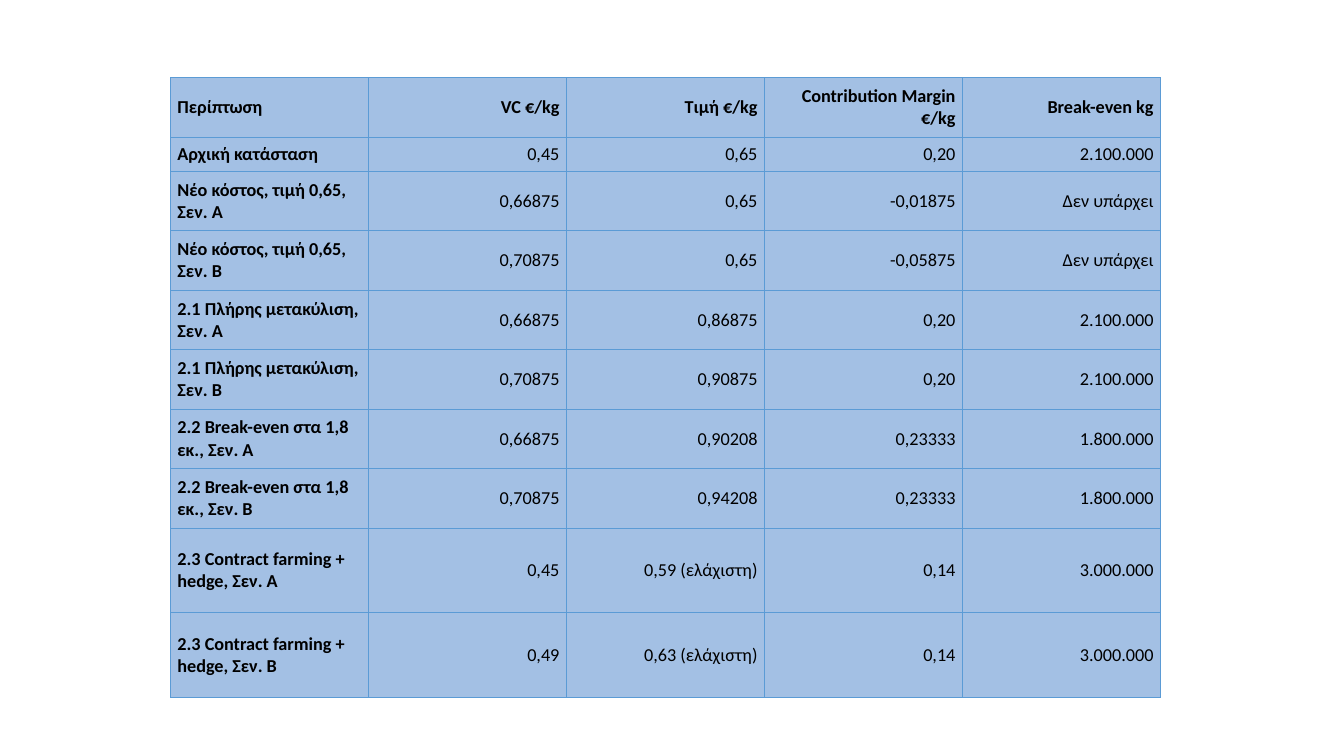
from dataclasses import dataclass

from lxml import etree
from pptx import Presentation
from pptx import util as u
from pptx.dml import color
from pptx.enum import text
from pptx.oxml import ns

COLORS = {"fill": "A3C0E4", "border": "5B9BD5", "text": "000000"}
FONT = "Calibri"
SIZE = u.Pt(13)
BORDER = u.Pt(0.5)
COLUMN = u.Inches(1.964)
MARGIN_X, MARGIN_Y = u.Inches(0.07), u.Inches(0.04)
SINGLE, DOUBLE, TALL = 0.34, 0.59, 0.84


@dataclass(frozen=True)
class Case:
    label: str
    values: tuple[str, ...]
    height: float = DOUBLE


CASES = [
    Case("Περίπτωση", ("VC €/kg", "Τιμή €/kg", "Contribution Margin €/kg", "Break-even kg")),
    Case("Αρχική κατάσταση", ("0,45", "0,65", "0,20", "2.100.000"), SINGLE),
    Case("Νέο κόστος, τιμή 0,65, Σεν. Α", ("0,66875", "0,65", "-0,01875", "Δεν υπάρχει")),
    Case("Νέο κόστος, τιμή 0,65, Σεν. Β", ("0,70875", "0,65", "-0,05875", "Δεν υπάρχει")),
    Case("2.1 Πλήρης μετακύλιση, Σεν. Α", ("0,66875", "0,86875", "0,20", "2.100.000")),
    Case("2.1 Πλήρης μετακύλιση, Σεν. Β", ("0,70875", "0,90875", "0,20", "2.100.000")),
    Case("2.2 Break-even στα 1,8 εκ., Σεν. Α", ("0,66875", "0,90208", "0,23333", "1.800.000")),
    Case("2.2 Break-even στα 1,8 εκ., Σεν. Β", ("0,70875", "0,94208", "0,23333", "1.800.000")),
    Case("2.3 Contract farming + hedge, Σεν. Α", ("0,45", "0,59 (ελάχιστη)", "0,14", "3.000.000"), TALL),
    Case("2.3 Contract farming + hedge, Σεν. Β", ("0,49", "0,63 (ελάχιστη)", "0,14", "3.000.000"), TALL),
]


def rgb(name: str) -> color.RGBColor:
    return color.RGBColor.from_string(COLORS[name])


def add_borders(cell) -> None:
    tc_pr = cell._tc.get_or_add_tcPr()
    for side in ("L", "R", "T", "B"):
        ln = etree.SubElement(tc_pr, ns.qn(f"a:ln{side}"), w=str(BORDER))
        fill = etree.SubElement(ln, ns.qn("a:solidFill"))
        etree.SubElement(fill, ns.qn("a:srgbClr"), val=COLORS["border"])


def write_cell(cell, content: str, bold: bool, align: text.PP_ALIGN) -> None:
    add_borders(cell)
    cell.fill.solid()
    cell.fill.fore_color.rgb = rgb("fill")
    cell.margin_left = cell.margin_right = MARGIN_X
    cell.margin_top = cell.margin_bottom = MARGIN_Y
    cell.vertical_anchor = text.MSO_ANCHOR.MIDDLE
    p = cell.text_frame.paragraphs[0]
    p.alignment = align
    r = p.add_run()
    r.text = content
    r.font.name = FONT
    r.font.size = SIZE
    r.font.bold = bold
    r.font.color.rgb = rgb("text")


def add_case_table(s, cases: list[Case], left: int, top: int) -> None:
    columns = 1 + len(cases[0].values)
    height = u.Inches(sum(case.height for case in cases))
    table = s.shapes.add_table(len(cases), columns, left, top, COLUMN * columns, height).table
    table.horz_banding = False
    for column in table.columns:
        column.width = COLUMN
    for i, case in enumerate(cases):
        table.rows[i].height = u.Inches(case.height)
        for j, content in enumerate((case.label, *case.values)):
            align = text.PP_ALIGN.RIGHT if j else text.PP_ALIGN.LEFT
            write_cell(table.cell(i, j), content, i == 0 or j == 0, align)


def main() -> None:
    prs = Presentation()
    prs.slide_width, prs.slide_height = u.Inches(13.33), u.Inches(7.5)
    s = prs.slides.add_slide(prs.slide_layouts[6])
    add_case_table(s, CASES, u.Inches(1.69), u.Inches(0.77))
    prs.save("out.pptx")


if __name__ == "__main__":
    main()
